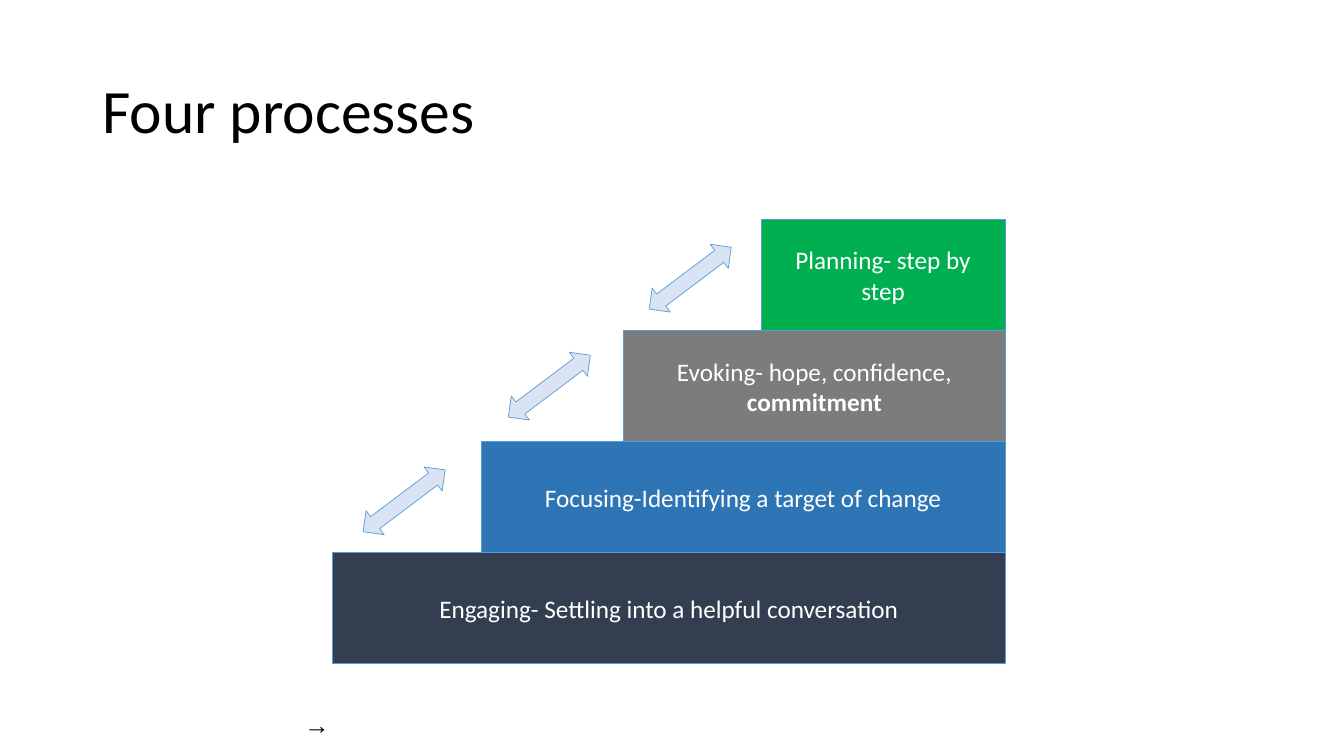
from pptx import Presentation
from pptx.dml.color import RGBColor
from pptx.enum.shapes import MSO_SHAPE
from pptx.enum.text import MSO_ANCHOR, PP_ALIGN
from pptx.util import Cm, Pt

BLACK = RGBColor(0x00, 0x00, 0x00)
WHITE = RGBColor(0xFF, 0xFF, 0xFF)
NAVY = RGBColor(0x33, 0x3F, 0x50)
BLUE = RGBColor(0x2E, 0x75, 0xB6)
GREY = RGBColor(0x7C, 0x7C, 0x7C)
GREEN = RGBColor(0x00, 0xB0, 0x50)
PALE_BLUE = RGBColor(0xDA, 0xE3, 0xF3)
OUTLINE = RGBColor(0x5B, 0x9B, 0xD5)

# From the bottom step up: indent in cm, fill, runs as (text, bold)
STEPS = [
    (0, NAVY, [("Engaging- Settling into a helpful conversation", False)]),
    (3.75, BLUE, [("Focusing-Identifying a target of change", False)]),
    (7.34, GREY, [("Evoking- hope, confidence, ", False), ("commitment", True)]),
    (10.8, GREEN, [("Planning- step by step", False)]),
]
# Offsets in cm from the top left corner of the staircase
ARROWS = [(0.51, 6.71), (4.17, 3.82), (7.72, 1.1)]


def add_run(paragraph, text, size, color, font="Calibri", bold=False):
    run = paragraph.add_run()
    run.text = text
    run.font.name = font
    run.font.size = Pt(size)
    run.font.bold = bold
    run.font.color.rgb = color


def add_outlined_shape(slide, kind, left, top, width, height, fill):
    shape = slide.shapes.add_shape(kind, left, top, width, height)
    shape.shadow.inherit = False
    shape.fill.solid()
    shape.fill.fore_color.rgb = fill
    shape.line.color.rgb = OUTLINE
    shape.line.width = Pt(0.5)
    return shape


def add_title(slide, left, top, width, height):
    text_frame = slide.shapes.add_textbox(left, top, width, height).text_frame
    text_frame.word_wrap = True
    text_frame.vertical_anchor = MSO_ANCHOR.MIDDLE
    paragraph = text_frame.paragraphs[0]
    paragraph.line_spacing = 0.9
    add_run(paragraph, "Four processes", 44, BLACK)


def add_staircase(slide, left, top, width, height):
    """Stack the steps flush right, with a slanted arrow beside each rise."""
    step_height = height // len(STEPS)
    for level, (indent, fill, runs) in enumerate(STEPS, start=1):
        step = add_outlined_shape(
            slide, MSO_SHAPE.RECTANGLE, left + Cm(indent),
            top + height - level * step_height,
            width - Cm(indent), step_height, fill)
        text_frame = step.text_frame
        text_frame.word_wrap = True
        text_frame.vertical_anchor = MSO_ANCHOR.MIDDLE
        paragraph = text_frame.paragraphs[0]
        paragraph.alignment = PP_ALIGN.CENTER
        for text, bold in runs:
            add_run(paragraph, text, 18, WHITE, bold=bold)
    for across, down in ARROWS:
        arrow = add_outlined_shape(
            slide, MSO_SHAPE.LEFT_RIGHT_ARROW, left + Cm(across),
            top + Cm(down), Cm(2.59), Cm(0.76), PALE_BLUE)
        arrow.rotation = 323


def add_arrow_sign(slide, left, top, width, height):
    text_frame = slide.shapes.add_textbox(left, top, width, height).text_frame
    text_frame.word_wrap = False
    add_run(text_frame.paragraphs[0], "→", 18, BLACK, font="Arial")


def main():
    presentation = Presentation()
    presentation.slide_width = Cm(33.87)
    presentation.slide_height = Cm(19.05)
    slide = presentation.slides.add_slide(presentation.slide_layouts[6])
    add_title(slide, Cm(2.33), Cm(1.01), Cm(29.21), Cm(3.68))
    add_staircase(slide, Cm(8.38), Cm(5.53), Cm(16.95), Cm(11.2))
    add_arrow_sign(slide, Cm(7.42), Cm(17.75), Cm(1.32), Cm(1.02))
    presentation.save("out.pptx")


if __name__ == "__main__":
    main()
